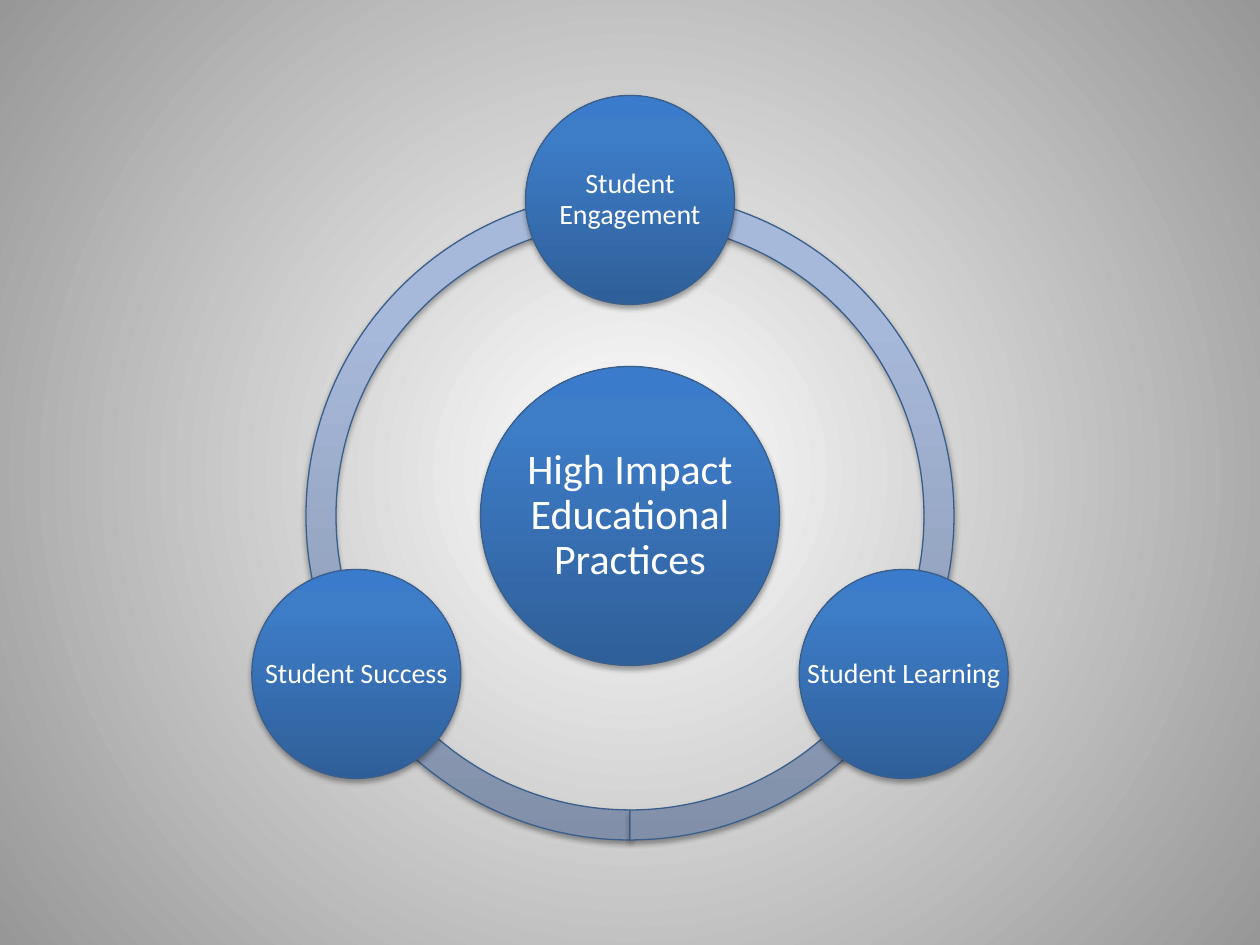
import math
from dataclasses import dataclass

import lxml.etree
import pptx
import pptx.dml.color
import pptx.enum.shapes
import pptx.enum.text
import pptx.oxml
import pptx.oxml.ns
import pptx.util

EMU_PER_PX = 914400 / 126
CENTER_X, CENTER_Y = 630, 516
RING_DIAMETER = 648
RING_THICKNESS = 30
ORBIT_RADIUS = 316
SATELLITE_DIAMETER = 209
ANGLE_UNITS = 0.6

DISC_STOPS = [(0, "2F5F99"), (80, "3D7CC7"), (100, "3A7CCB")]
RING_STOPS = [(0, "818FA8"), (80, "A7B9DA"), (100, "A7BADC")]
BACKGROUND_STOPS = [(0, "FFFFFF"), (100, "979797")]
UPWARD = '<a:lin {ns} ang="16200000" scaled="0"/>'
FROM_CENTER = (
    '<a:path {ns} path="circle">'
    '<a:fillToRect l="50000" t="50000" r="50000" b="50000"/></a:path>'
)
SOFT_SHADOW = (
    '<a:effectLst {ns}><a:outerShdw blurRad="39370" dist="22860" dir="5400000" '
    'rotWithShape="0"><a:srgbClr val="000000"><a:alpha val="35000"/></a:srgbClr>'
    "</a:outerShdw></a:effectLst>"
)


@dataclass
class Disc:
    label: str
    x: float
    y: float
    diameter: int
    font_size: int
    inset: int


def px(length: float) -> int:
    return pptx.util.Emu(round(length * EMU_PER_PX))


def color(value: str) -> pptx.dml.color.RGBColor:
    return pptx.dml.color.RGBColor.from_string(value)


def element(template: str) -> lxml.etree._Element:
    return pptx.oxml.parse_xml(template.format(ns=pptx.oxml.ns.nsdecls("a")))


def square(x: float, y: float, size: int) -> tuple:
    return px(x - size / 2), px(y - size / 2), px(size), px(size)


def apply_gradient(fill, owner, stops: list, direction: str) -> None:
    fill.gradient()
    gradient = owner.find(".//" + pptx.oxml.ns.qn("a:gradFill"))
    for child in list(gradient):
        gradient.remove(child)
    stop_xml = "".join(
        f'<a:gs pos="{position * 1000}"><a:srgbClr val="{value}"/></a:gs>'
        for position, value in stops
    )
    gradient.append(element("<a:gsLst {ns}>" + stop_xml + "</a:gsLst>"))
    gradient.append(element(direction))


def apply_style(shape, stops: list) -> None:
    apply_gradient(shape.fill, shape.element.spPr, stops, UPWARD)
    shape.line.color.rgb = color("3A5F8C")
    shape.line.width = pptx.util.Pt(0.75)
    shape.element.spPr.append(element(SOFT_SHADOW))


def draw_arc(slide, start: int, end: int) -> None:
    arc = slide.shapes.add_shape(
        pptx.enum.shapes.MSO_SHAPE.BLOCK_ARC,
        *square(CENTER_X, CENTER_Y, RING_DIAMETER),
    )
    arc.adjustments[0] = start * ANGLE_UNITS
    arc.adjustments[1] = end * ANGLE_UNITS
    arc.adjustments[2] = RING_THICKNESS / RING_DIAMETER
    apply_style(arc, RING_STOPS)


def draw_disc(slide, disc: Disc) -> None:
    bounds = square(disc.x, disc.y, disc.diameter)
    circle = slide.shapes.add_shape(pptx.enum.shapes.MSO_SHAPE.OVAL, *bounds)
    apply_style(circle, DISC_STOPS)

    frame = slide.shapes.add_textbox(*bounds).text_frame
    frame.word_wrap = True
    frame.vertical_anchor = pptx.enum.text.MSO_ANCHOR.MIDDLE
    frame.margin_left = frame.margin_right = px(disc.inset)
    frame.margin_top = frame.margin_bottom = px(disc.inset)
    frame.text = disc.label
    paragraph = frame.paragraphs[0]
    paragraph.alignment = pptx.enum.text.PP_ALIGN.CENTER
    paragraph.line_spacing = 0.9
    font = paragraph.runs[0].font
    font.name = "Calibri"
    font.size = pptx.util.Pt(disc.font_size)
    font.color.rgb = color("FFFFFF")


def satellite(label: str, degrees: int) -> Disc:
    angle = math.radians(degrees)
    return Disc(
        label,
        CENTER_X + ORBIT_RADIUS * math.cos(angle),
        CENTER_Y + ORBIT_RADIUS * math.sin(angle),
        SATELLITE_DIAMETER,
        16,
        3,
    )


def main() -> None:
    presentation = pptx.Presentation()
    presentation.slide_width = px(1260)
    presentation.slide_height = px(945)
    slide = presentation.slides.add_slide(presentation.slide_layouts[6])
    apply_gradient(
        slide.background.fill, slide.element, BACKGROUND_STOPS, FROM_CENTER
    )

    for start, end in [(90, 162), (18, 90), (162, 18)]:
        draw_arc(slide, start, end)

    hub = Disc("High Impact Educational Practices", CENTER_X, CENTER_Y, 299, 24, 4)
    outcomes = [
        satellite("Student Engagement", 270),
        satellite("Student Learning", 30),
        satellite("Student Success", 150),
    ]
    for disc in [hub, *outcomes]:
        draw_disc(slide, disc)

    presentation.save("out.pptx")


if __name__ == "__main__":
    main()
